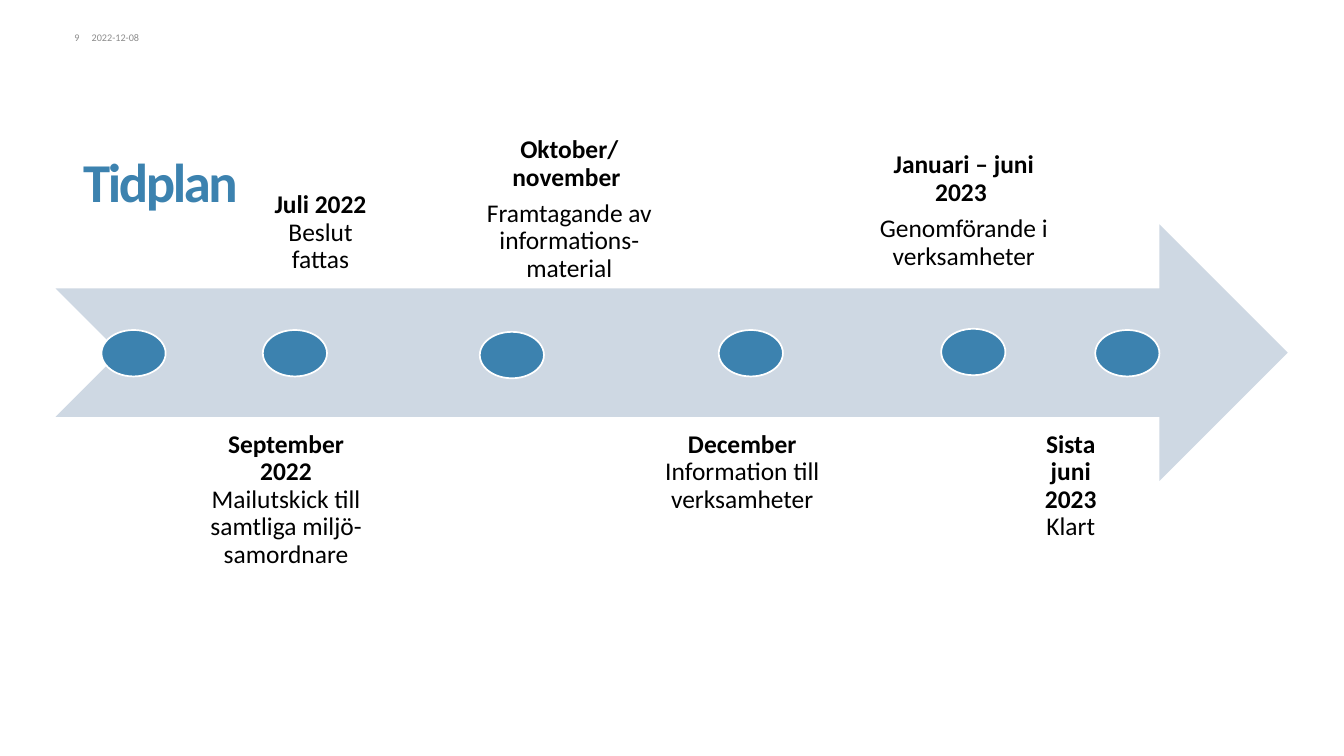
from pptx import Presentation
from pptx.dml.color import RGBColor
from pptx.enum.shapes import MSO_SHAPE as Shape
from pptx.enum.text import MSO_ANCHOR as Anchor, PP_ALIGN as Align
from pptx.util import Inches, Pt

COLORS = {"blue": "3C82AF", "pale": "CED8E3", "gray": "8C8C8C", "black": "000000", "white": "FFFFFF"}
ARROW = (0.91, 3.67, 20.16, 4.2)
DOT = (1.05, 0.76)
DOTS = [(1.66, 5.4), (4.3, 5.4), (7.85, 5.43), (11.76, 5.4), (15.4, 5.38), (17.92, 5.4)]
ABOVE = [
    ((4.13, 0.52, 2.23, 4.2), [[("Juli 2022", True), (" Beslut fattas", False)]]),
    ((7.3, 0.52, 4.03, 4.34), [[("Oktober/\nnovember ", True)],
                               [("Framtagande av informations-material", False)]]),
    ((14.04, 0.54, 3.46, 4.12), [[("Januari – juni 2023 ", True)],
                                 [("Genomförande i verksamheter", False)]]),
]
BELOW = [
    ((3.19, 6.83, 2.98, 4.2), [[("September 2022 ", True),
                                ("Mailutskick till samtliga miljö-samordnare", False)]]),
    ((10.28, 6.83, 3.73, 4.2), [[("December", True), (" Information till verksamheter", False)]]),
    ((16.77, 6.83, 1.5, 4.2), [[("Sista juni 2023", True), (" Klart", False)]]),
]

deck = Presentation()
deck.slide_width, deck.slide_height = Inches(21.99), Inches(12.37)
slide = deck.slides.add_slide(deck.slide_layouts[6])


def rgb(name):
    return RGBColor.from_string(COLORS[name])


def add_text(box, paras, size=30, color="black", align=Align.CENTER, anchor=Anchor.TOP,
             pad=(0.23, 0.23, 0.23, 0.23), lead=0.9, after=10.5, track=None):
    frame = slide.shapes.add_textbox(*map(Inches, box)).text_frame
    frame.word_wrap = True
    frame.vertical_anchor = anchor
    frame.margin_left, frame.margin_top, frame.margin_right, frame.margin_bottom = map(Inches, pad)
    for i, runs in enumerate(paras):
        para = frame.add_paragraph() if i else frame.paragraphs[0]
        para.alignment = align
        para.line_spacing = lead
        para.space_after = Pt(after)
        for text, bold in runs:
            for j, line in enumerate(text.split("\n")):
                if j:
                    para.add_line_break()
                run = para.add_run()
                run.text = line
                font = run.font
                font.name, font.size, font.bold = "Calibri", Pt(size), bold
                font.color.rgb = rgb(color)
                if track:
                    run._r.get_or_add_rPr().set("spc", str(track))


def add_form(kind, box, fill, line=None):
    form = slide.shapes.add_shape(kind, *map(Inches, box))
    form.shadow.inherit = False
    form.fill.solid()
    form.fill.fore_color.rgb = rgb(fill)
    if line:
        form.line.color.rgb = rgb(line)
        form.line.width = Pt(2)
    else:
        form.line.fill.background()


add_text((1.36, 1.34, 19.27, 2.23), [[("Tidplan", True)]], size=64.5, color="blue", align=Align.LEFT,
         anchor=Anchor.BOTTOM, pad=(0, 0, 0, 0.08), lead=0.85, after=0, track=-280)
for box, text, align in [((1.5, 0.52, 0.87, 0.2), "2022-12-08", Align.LEFT),
                         ((0.91, 0.52, 0.39, 0.2), "9", Align.RIGHT)]:
    add_text(box, [[(text, False)]], size=12, color="gray", align=align, pad=(0, 0, 0, 0), lead=1, after=0)

add_form(Shape.NOTCHED_RIGHT_ARROW, ARROW, "pale")
for spot in DOTS:
    add_form(Shape.OVAL, spot + DOT, "blue", "white")
for labels, anchor in [(ABOVE, Anchor.BOTTOM), (BELOW, Anchor.TOP)]:
    for box, paras in labels:
        add_text(box, paras, anchor=anchor)

deck.save("out.pptx")
